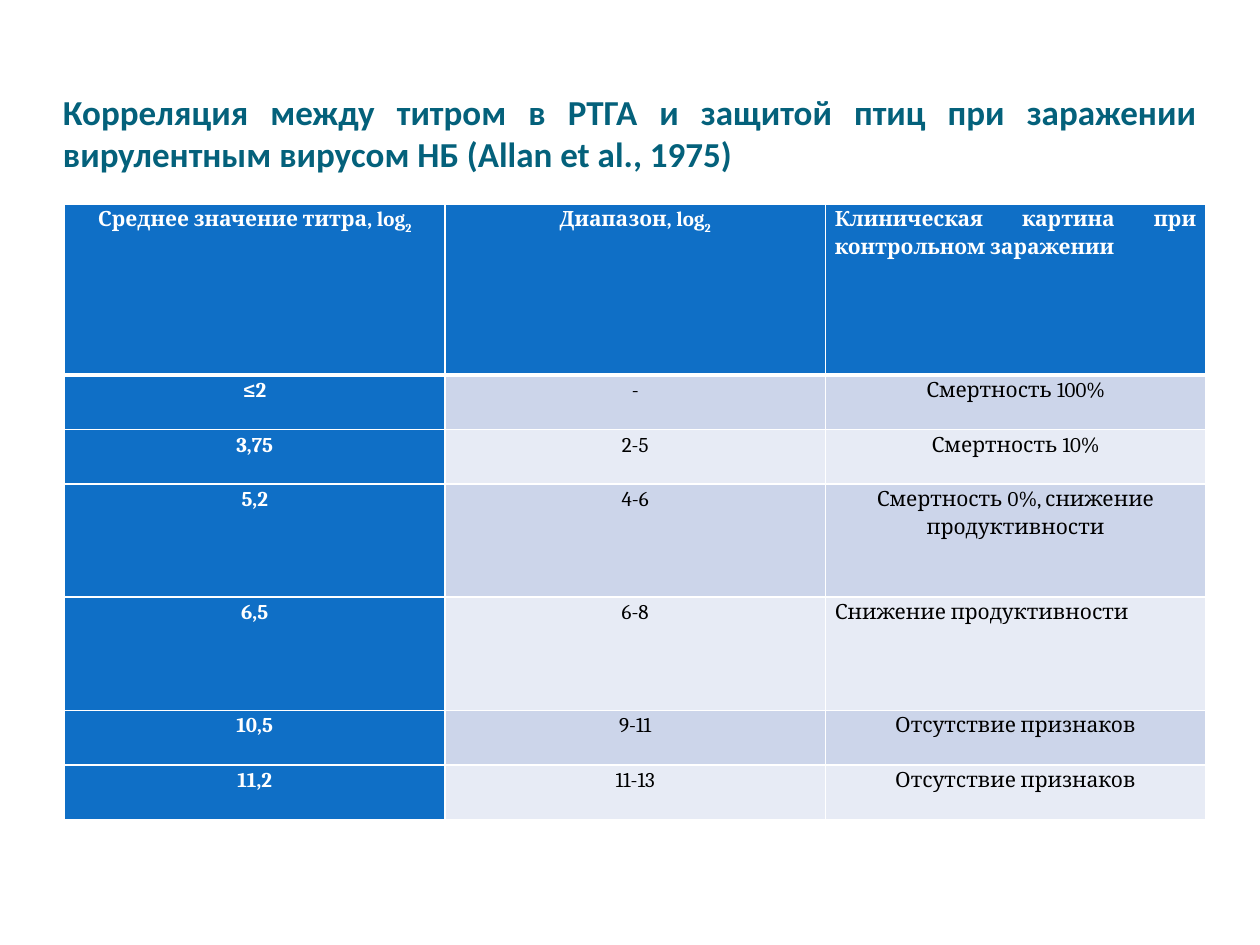
"""Build a slide with a table relating antibody titre to protection of birds."""
import lxml.etree
import pptx
import pptx.dml.color
import pptx.enum.text
import pptx.oxml.ns
import pptx.util

Cm = pptx.util.Cm
Pt = pptx.util.Pt
ALIGN = pptx.enum.text.PP_ALIGN
COLORS = {
    "title": "04617B",
    "accent": "0F6FC6",
    "dark_band": "CCD5EA",
    "light_band": "E7EBF5",
    "white": "FFFFFF",
    "black": "000000",
}
HEADERS = [
    "Среднее значение титра, log",
    "Диапазон, log",
    "Клиническая картина при контрольном заражении",
]
RESULTS = [
    ("≤2", "-", "Смертность 100%"),
    ("3,75", "2-5", "Смертность 10%"),
    ("5,2", "4-6", "Смертность 0%, снижение продуктивности"),
    ("6,5", "6-8", "Снижение продуктивности"),
    ("10,5", "9-11", "Отсутствие признаков"),
    ("11,2", "11-13", "Отсутствие признаков"),
]
ROW_HEIGHTS = [3.45, 1.1, 1.1, 2.28, 2.28, 1.1, 1.1]
JUSTIFIED = [(0, 2), (4, 2)]


def style_span(span, name, size, color, bold):
    span.font.name = name
    span.font.size = Pt(size)
    span.font.bold = bold
    span.font.color.rgb = pptx.dml.color.RGBColor.from_string(COLORS[color])


def add_border(cell, side, width):
    properties = cell._tc.get_or_add_tcPr()
    line = lxml.etree.SubElement(properties, pptx.oxml.ns.qn(f"a:ln{side}"), w=str(Pt(width)))
    fill = lxml.etree.SubElement(line, pptx.oxml.ns.qn("a:solidFill"))
    lxml.etree.SubElement(fill, pptx.oxml.ns.qn("a:srgbClr"), val=COLORS["white"])


deck = pptx.Presentation()
deck.slide_width = Cm(25.4)
deck.slide_height = Cm(19.05)
page = deck.slides.add_slide(deck.slide_layouts[6])

title_box = page.shapes.add_textbox(Cm(1.27), Cm(1.12), Cm(22.86), Cm(2.39))
frame = title_box.text_frame
frame.word_wrap = True
frame.vertical_anchor = pptx.enum.text.MSO_ANCHOR.BOTTOM
frame.margin_left = frame.margin_right = frame.margin_bottom = 0
frame.margin_top = Cm(0.13)
frame.text = "Корреляция между титром в РТГА и защитой птиц при заражении вирулентным вирусом НБ (Allan et al., 1975)"
para = frame.paragraphs[0]
para.alignment = ALIGN.JUSTIFY
style_span(para.runs[0], "Calibri", 20, "title", True)

rows = [HEADERS, *RESULTS]
table = page.shapes.add_table(
    len(rows), len(HEADERS), Cm(1.3), Cm(4.11), Cm(23.01), Cm(sum(ROW_HEIGHTS))
).table
for column in table.columns:
    column.width = Cm(7.67)

for row_index, values in enumerate(rows):
    table.rows[row_index].height = Cm(ROW_HEIGHTS[row_index])
    band = "dark_band" if row_index % 2 else "light_band"
    for column_index, value in enumerate(values):
        cell = table.cell(row_index, column_index)
        cell.margin_left = cell.margin_right = Cm(0.19)
        cell.margin_top = cell.margin_bottom = 0
        add_border(cell, "L", 1)
        add_border(cell, "R", 1)
        add_border(cell, "T", 3 if row_index == 1 else 1)
        add_border(cell, "B", 3 if row_index == 0 else 1)
        heading = row_index == 0 or column_index == 0
        cell.fill.solid()
        cell.fill.fore_color.rgb = pptx.dml.color.RGBColor.from_string(
            COLORS["accent" if heading else band]
        )
        cell.text_frame.text = value
        para = cell.text_frame.paragraphs[0]
        para.line_spacing = 1.15
        para.alignment = ALIGN.JUSTIFY if (row_index, column_index) in JUSTIFIED else ALIGN.CENTER
        if value.endswith("log"):
            subscript = para.add_run()
            subscript.text = "2"
            subscript._r.get_or_add_rPr().set("baseline", "-25000")
        for span in para.runs:
            style_span(span, "Cambria", 12, "white" if heading else "black", heading)

deck.save("out.pptx")
